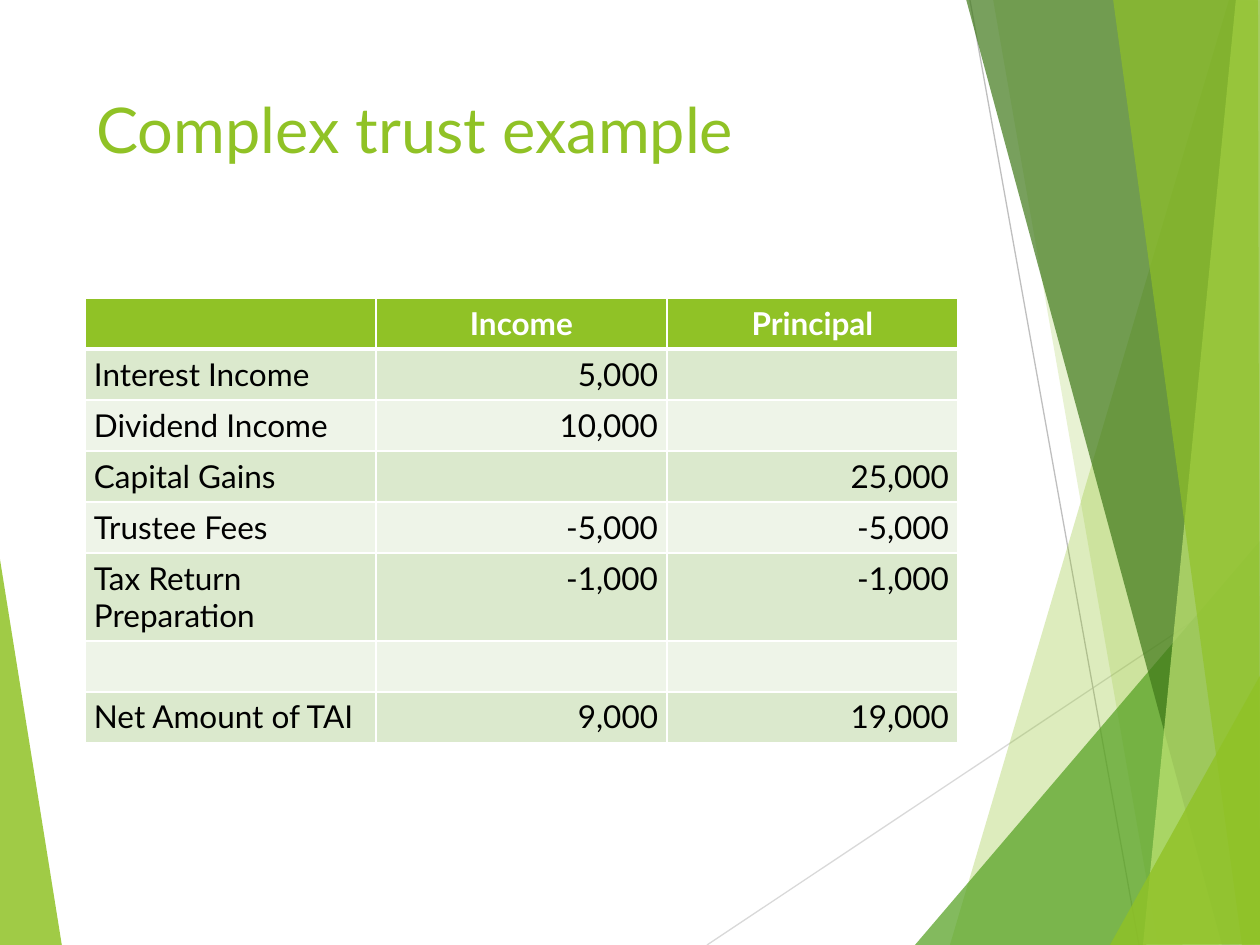
from lxml.etree import SubElement
from pptx import Presentation
from pptx.dml.color import RGBColor
from pptx.enum.shapes import MSO_CONNECTOR
from pptx.enum.text import MSO_ANCHOR, MSO_AUTO_SIZE, PP_ALIGN
from pptx.oxml.ns import qn
from pptx.util import Emu, Pt

FONT = "Lato"
GREEN, WHITE, BLACK = "90C226", "FFFFFF", "000000"
BANDS = ("DBE9CD", "EEF4E8")

# Outline points in px, colour, opacity in percent; back to front
LEFT_FACET = ([(-1, 553), (62, 946), (-1, 945)], GREEN, 85)
RIGHT_FACETS = [
    ([(1229, 0), (950, 945), (1262, 946), (1261, 1)], GREEN, 30),
    ([(993, -1), (1158, 945), (1261, 945), (1261, -1)], GREEN, 20),
    ([(915, 945), (1260, 541), (1261, 945)], "54A021", 72),
    ([(966, -1), (1222, 945), (1261, 944), (1261, -1)], "3F7819", 70),
    ([(1236, -1), (1143, 945), (1261, 945), (1260, -1)], "C0E474", 70),
    ([(1113, -1), (1242, 945), (1260, 945), (1258, -1)], GREEN, 65),
    ([(1110, 945), (1261, 674), (1261, 944)], GREEN, 80),
]
RAYS = [((707, 945), (1261, 576), "D9D9D9"), ((970, 0), (1139, 945), "BFBFBF")]

TRUST_ROWS = [
    ("", "Income", "Principal"),
    ("Interest Income", "5,000", ""),
    ("Dividend Income", "10,000", ""),
    ("Capital Gains", "", "25,000"),
    ("Trustee Fees", "-5,000", "-5,000"),
    ("Tax Return Preparation", "-1,000", "-1,000"),
    ("", "", ""),
    ("Net Amount of TAI", "9,000", "19,000"),
]
COLUMN_WIDTH, ROW_HEIGHT = 291, 51


def px(length):
    return Emu(round(length * 914400 / 126))


def rgb(colour):
    return RGBColor.from_string(colour)


def style_text(paragraph, size, colour, align, bold=False):
    paragraph.alignment = align
    for run in paragraph.runs:
        run.font.name = FONT
        run.font.size = Pt(size)
        run.font.bold = bold
        run.font.color.rgb = rgb(colour)


def add_facet(slide, points, colour, opacity):
    corners = [(px(x), px(y)) for x, y in points]
    builder = slide.shapes.build_freeform(*corners[0])
    builder.add_line_segments(corners[1:], close=True)
    facet = builder.convert_to_shape()
    facet.shadow.inherit = False
    facet.line.fill.background()
    facet.fill.solid()
    facet.fill.fore_color.rgb = rgb(colour)
    tint = facet.fill._xPr.find(qn("a:solidFill"))[0]
    SubElement(tint, qn("a:alpha"), val=str(opacity * 1000))


def add_ray(slide, start, end, colour):
    ray = slide.shapes.add_connector(
        MSO_CONNECTOR.STRAIGHT, *map(px, start + end))
    ray.line.color.rgb = rgb(colour)
    ray.line.width = Pt(0.75)
    SubElement(ray._element.spPr, qn("a:effectLst"))


def set_title(slide, text):
    title = slide.shapes.title
    title.left, title.top, title.width, title.height = map(px, (84, 84, 874, 181))
    frame = title.text_frame
    frame.text = text
    frame.word_wrap = True
    frame.auto_size = MSO_AUTO_SIZE.NONE
    frame.vertical_anchor = MSO_ANCHOR.TOP
    style_text(frame.paragraphs[0], 36, GREEN, PP_ALIGN.LEFT)


def set_borders(cell, top, bottom):
    properties = cell._tc.get_or_add_tcPr()
    for side, width in (("L", 1), ("R", 1), ("T", top), ("B", bottom)):
        edge = SubElement(properties, qn(f"a:ln{side}"), w=str(Pt(width)))
        SubElement(SubElement(edge, qn("a:solidFill")), qn("a:srgbClr"), val=WHITE)


def fill_cell(cell, text, row, column):
    header = row == 0
    cell.margin_left = cell.margin_right = px(9)
    cell.margin_top = cell.margin_bottom = px(6)
    # The rule under the header is heavier than the others
    set_borders(cell, top=3 if row == 1 else 1, bottom=3 if header else 1)
    cell.fill.solid()
    cell.fill.fore_color.rgb = rgb(GREEN if header else BANDS[(row - 1) % 2])
    if not text:
        return
    cell.text_frame.text = text
    if header:
        align = PP_ALIGN.CENTER
    else:
        align = PP_ALIGN.RIGHT if column else PP_ALIGN.LEFT
    style_text(cell.text_frame.paragraphs[0], 18,
               WHITE if header else BLACK, align, header)


def add_trust_table(slide, left, top):
    row_count, column_count = len(TRUST_ROWS), len(TRUST_ROWS[0])
    table = slide.shapes.add_table(
        row_count, column_count, px(left), px(top),
        px(column_count * COLUMN_WIDTH), px(row_count * ROW_HEIGHT)).table
    for column in table.columns:
        column.width = px(COLUMN_WIDTH)
    for row, entries in enumerate(TRUST_ROWS):
        table.rows[row].height = px(ROW_HEIGHT)
        for column, entry in enumerate(entries):
            fill_cell(table.cell(row, column), entry, row, column)
    # Room for the label that wraps onto two lines
    table.rows[5].height = px(88)


def main():
    deck = Presentation()
    deck.slide_width, deck.slide_height = px(1260), px(945)
    slide = deck.slides.add_slide(deck.slide_layouts[5])

    # Background facets and rays
    add_facet(slide, *LEFT_FACET)
    for ray in RAYS:
        add_ray(slide, *ray)
    for facet in RIGHT_FACETS:
        add_facet(slide, *facet)

    # Content
    set_title(slide, "Complex trust example")
    add_trust_table(slide, 85, 298)

    deck.save("out.pptx")


if __name__ == "__main__":
    main()
